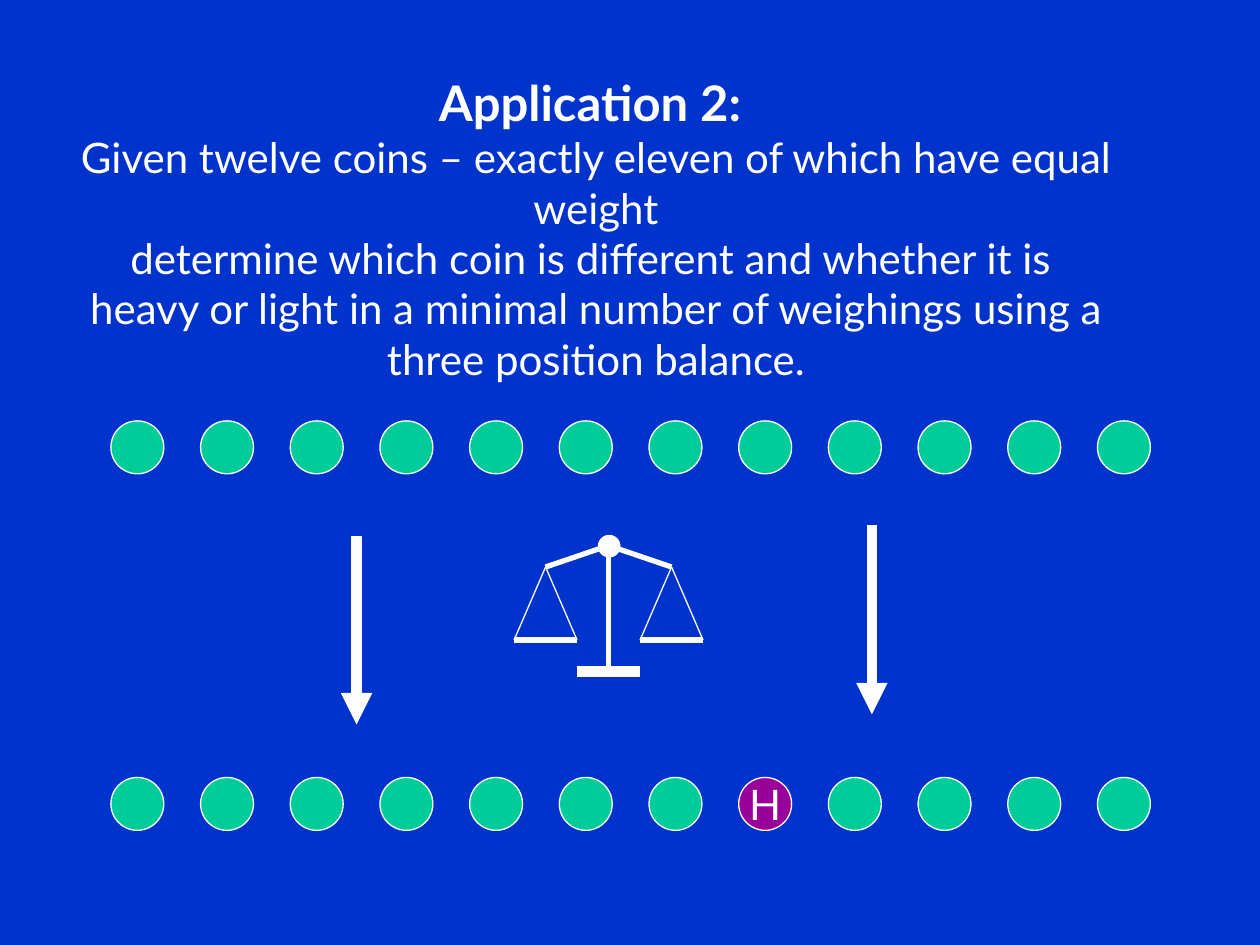
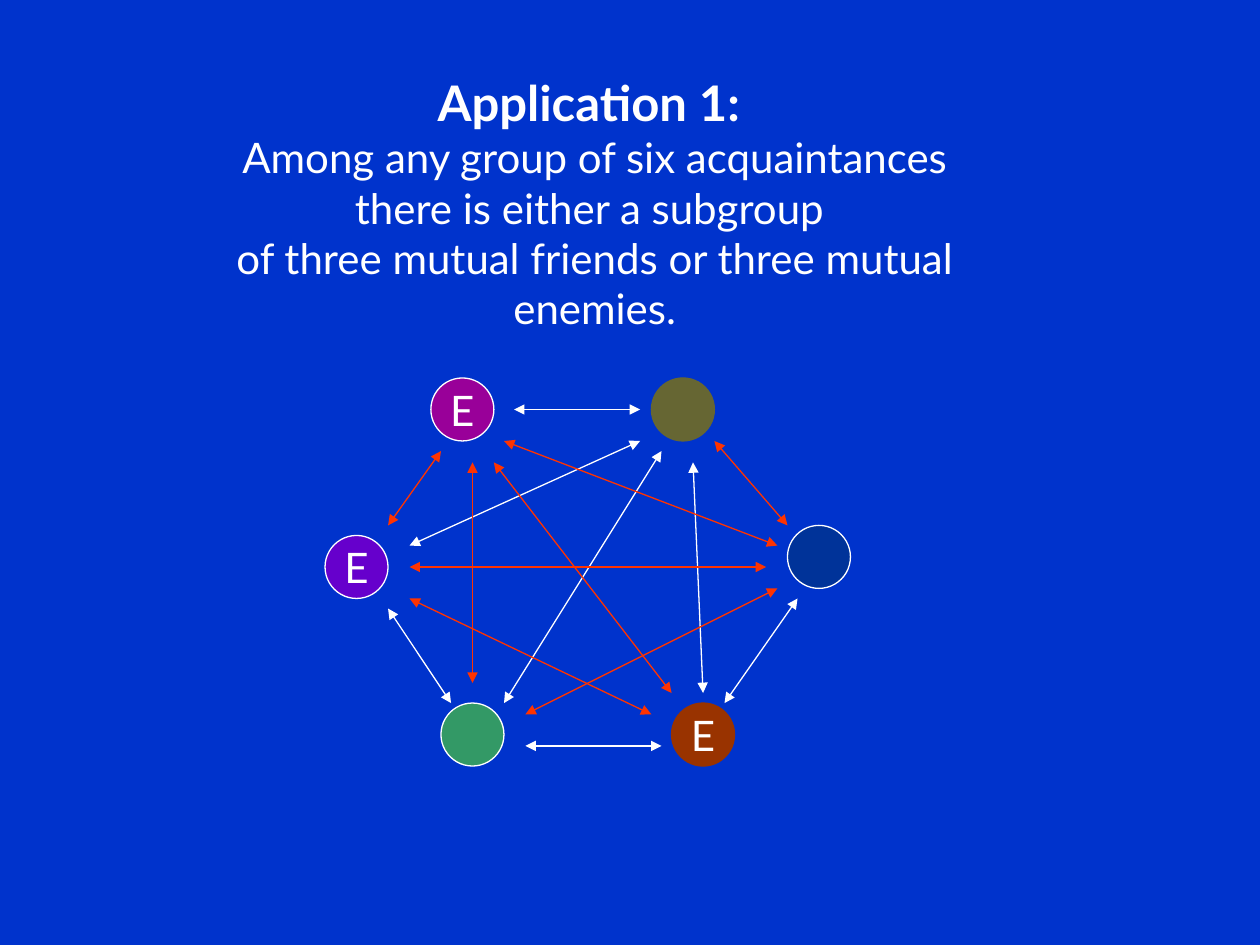
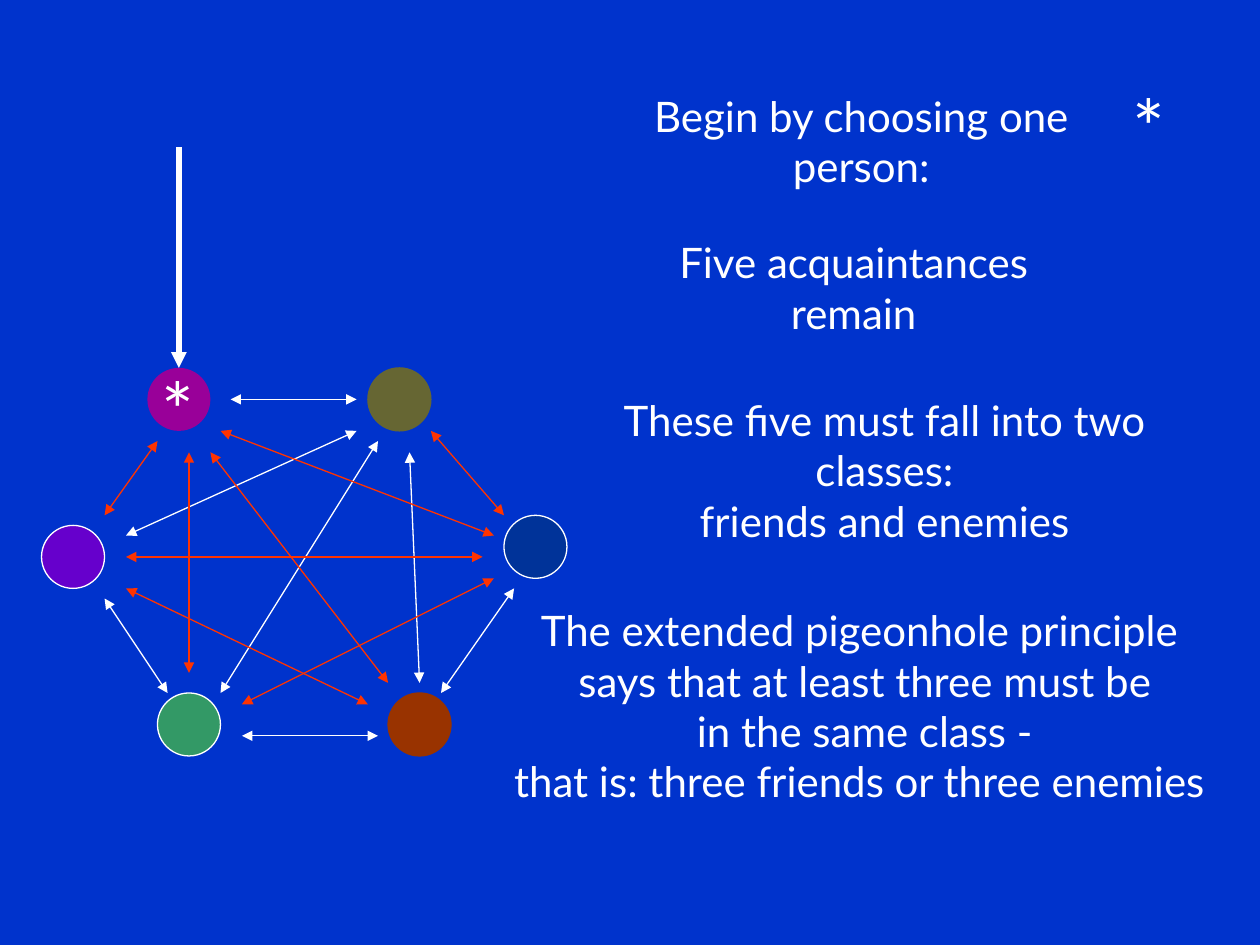
from lxml import etree
from pptx import Presentation
from pptx.dml.color import RGBColor
from pptx.enum.shapes import MSO_CONNECTOR, MSO_SHAPE
from pptx.enum.text import MSO_ANCHOR, PP_ALIGN
from pptx.oxml.ns import qn
from pptx.util import Inches, Pt

COLORS = {
    "background": "0033CC",
    "white": "FFFFFF",
    "coin": "00CC99",
    "enemy": "FF3300",
    "purple": "990099",
    "olive": "666633",
    "violet": "6600CC",
    "navy": "003399",
    "green": "339966",
    "brown": "993300",
}
FONT = "Lato"
BODY_SIZE, TITLE_SIZE, STAR_SIZE = 24, 28, 44
THIN, MEDIUM, THICK = 0.75, 3, 6

# Each person: left and top within the network, outline colour
PERSON_SIZE = 0.5
PEOPLE = {
    "brown": (2.75, 2.58, "brown"),
    "green": (0.92, 2.58, "white"),
    "violet": (0, 1.25, "white"),
    "purple": (0.84, 0, "white"),
    "navy": (3.67, 1.17, "white"),
    "olive": (2.59, 0, "olive"),
}

# Ties between people: start x, start y, end x, end y within the network
TIES = {
    "white": [
        (1.42, 2.58, 2.67, 0.58), (1.5, 0.25, 2.5, 0.25),
        (0.5, 1.83, 1, 2.58), (1.59, 2.92, 2.67, 2.92),
        (3.17, 2.58, 3.75, 1.75), (2.92, 0.67, 3, 2.5),
        (0.67, 1.33, 2.5, 0.5),
    ],
    "enemy": [
        (1.42, 0.5, 3.59, 1.33), (0.92, 0.58, 0.5, 1.17),
        (1.17, 0.67, 1.17, 2.42), (1.34, 0.67, 2.75, 2.5),
        (3.09, 0.5, 3.67, 1.17), (0.67, 1.5, 3.5, 1.5),
        (1.59, 2.67, 3.59, 1.67), (0.67, 1.75, 2.59, 2.67),
    ],
}

COIN_COUNT, COIN_SIZE = 12, 0.42
COIN_LEFT, LAST_COIN_LEFT = 0.88, 8.71
COIN_STEP = (LAST_COIN_LEFT - COIN_LEFT) / (COIN_COUNT - 1)


def rgb(name):
    return RGBColor.from_string(COLORS[name])


class Deck:
    """Holds the shared style and the slide being built."""

    def __init__(self):
        self.presentation = Presentation()
        self.presentation.slide_width = Inches(10)
        self.presentation.slide_height = Inches(7.5)
        self.slide = None

    def new_slide(self):
        self.slide = self.presentation.slides.add_slide(self.presentation.slide_layouts[6])
        fill = self.slide.background.fill
        fill.solid()
        fill.fore_color.rgb = rgb("background")

    def style(self, paragraph, size=BODY_SIZE, bold=False):
        paragraph.alignment = PP_ALIGN.CENTER
        for run in paragraph.runs:
            run.font.name = FONT
            run.font.size = Pt(size)
            run.font.bold = bold
            run.font.color.rgb = rgb("white")

    def text(self, left, top, width, height, lines, size=BODY_SIZE, titled=False):
        box = self.slide.shapes.add_textbox(
            Inches(left), Inches(top), Inches(width), Inches(height))
        text_frame = box.text_frame
        text_frame.word_wrap = True
        text_frame.text = "\n".join(lines)
        for paragraph in text_frame.paragraphs:
            self.style(paragraph, size)
        if titled:
            self.style(text_frame.paragraphs[0], TITLE_SIZE, bold=True)

    def circle(self, left, top, size, color, outline="white", label="", shapes=None):
        shapes = shapes or self.slide.shapes
        shape = shapes.add_shape(
            MSO_SHAPE.OVAL, Inches(left), Inches(top), Inches(size), Inches(size))
        shape.shadow.inherit = False
        shape.fill.solid()
        shape.fill.fore_color.rgb = rgb(color)
        if outline:
            shape.line.color.rgb = rgb(outline)
            shape.line.width = Pt(THIN)
        else:
            shape.line.fill.background()
        if label:
            text_frame = shape.text_frame
            text_frame.word_wrap = False
            text_frame.vertical_anchor = MSO_ANCHOR.MIDDLE
            text_frame.text = label
            self.style(text_frame.paragraphs[0])
        return shape

    def line(self, x1, y1, x2, y2, width=THIN, color="white", ends=()):
        connector = self.slide.shapes.add_connector(
            MSO_CONNECTOR.STRAIGHT, Inches(x1), Inches(y1), Inches(x2), Inches(y2))
        connector.line.color.rgb = rgb(color)
        connector.line.width = Pt(width)
        outline = connector.line._get_or_add_ln()
        for end in ends:
            etree.SubElement(outline, qn(f"a:{end}"), type="triangle")
        etree.SubElement(connector._element.spPr, qn("a:effectLst"))
        return connector

    def arrow(self, x1, y1, x2, y2, width):
        return self.line(x1, y1, x2, y2, width, ends=["tailEnd"])

    def coin_row(self, top, heavy=None):
        group = self.slide.shapes.add_group_shape()
        for index in range(COIN_COUNT):
            color, label = ("purple", "H") if index == heavy else ("coin", "")
            self.circle(COIN_LEFT + index * COIN_STEP, top, COIN_SIZE, color,
                        label=label, shapes=group.shapes)

    def balance(self, center, top):
        pan_y, base_y = top + 0.75, top + 1
        self.line(center, top, center, base_y, MEDIUM)
        for hook in (center - 0.5, center + 0.5):
            self.line(center, top, hook, top + 0.17, MEDIUM)
            self.line(hook - 0.25, pan_y, hook + 0.25, pan_y, MEDIUM)
            for pan_end in (hook - 0.25, hook + 0.25):
                self.line(hook, top + 0.17, pan_end, pan_y)
        self.circle(center - 0.08, top - 0.08, 0.17, "white")
        self.line(center - 0.25, base_y, center + 0.25, base_y, THICK)

    def network(self, left, top, labels=None, outlines=None):
        labels, outlines = labels or {}, outlines or {}
        people = {}
        for name, (x, y, outline) in PEOPLE.items():
            people[name] = self.circle(
                left + x, top + y, PERSON_SIZE, name,
                outlines.get(name, outline), labels.get(name, ""))
        for color, ties in TIES.items():
            for x1, y1, x2, y2 in ties:
                self.line(left + x1, top + y1, left + x2, top + y2,
                          color=color, ends=["headEnd", "tailEnd"])
        return people


def coins_slide(deck):
    deck.new_slide()
    deck.text(0.38, 0.53, 8.7, 2.16, [
        "Application 2: ",
        "Given twelve coins – exactly eleven of which have equal weight",
        "determine which coin is different and whether it is ",
        "heavy or light in a minimal number of weighings using a",
        "three position balance.",
    ], titled=True)
    deck.coin_row(3.34)
    deck.balance(4.83, 4.33)
    for x, y in ((2.83, 4.25), (6.92, 4.17)):
        deck.arrow(x, y, x, y + 1.5, THICK)
    deck.coin_row(6.17, heavy=7)


def acquaintances_slide(deck):
    deck.new_slide()
    deck.text(1.25, 0.53, 6.94, 1.77, [
        "Application 1: ",
        "Among any group of six acquaintances",
        "there is either a subgroup ",
        "of three mutual friends or three mutual enemies.",
    ], titled=True)
    deck.network(2.58, 3, labels=dict.fromkeys(["brown", "violet", "purple"], "E"))


def proof_slide(deck):
    deck.new_slide()
    deck.text(4.64, 0.67, 4.39, 0.5, ["Begin by choosing one person:"])
    people = deck.network(0.33, 2.92, outlines={"purple": None})

    # The chosen person
    pointer = deck.arrow(1.42, 1.17, 1.42, 2.92, MEDIUM)
    pointer.end_connect(people["purple"], 0)
    deck.text(1.08, 2.83, 0.67, 0.83, ["*"], STAR_SIZE)

    # The argument
    deck.text(4.83, 1.83, 3.89, 0.5, ["Five acquaintances remain"])
    deck.text(4.42, 3.08, 5.2, 0.9, [
        "These five must fall into two classes:",
        "friends and enemies",
    ])
    deck.text(3.83, 4.75, 5.98, 1.7, [
        "The extended pigeonhole principle",
        " says that at least three must be",
        " in the same class -",
        "that is: three friends or three enemies",
    ])
    deck.text(8.83, 0.58, 0.58, 0.83, ["*"], STAR_SIZE)


def main():
    deck = Deck()
    coins_slide(deck)
    acquaintances_slide(deck)
    proof_slide(deck)
    deck.presentation.save("out.pptx")


if __name__ == "__main__":
    main()
